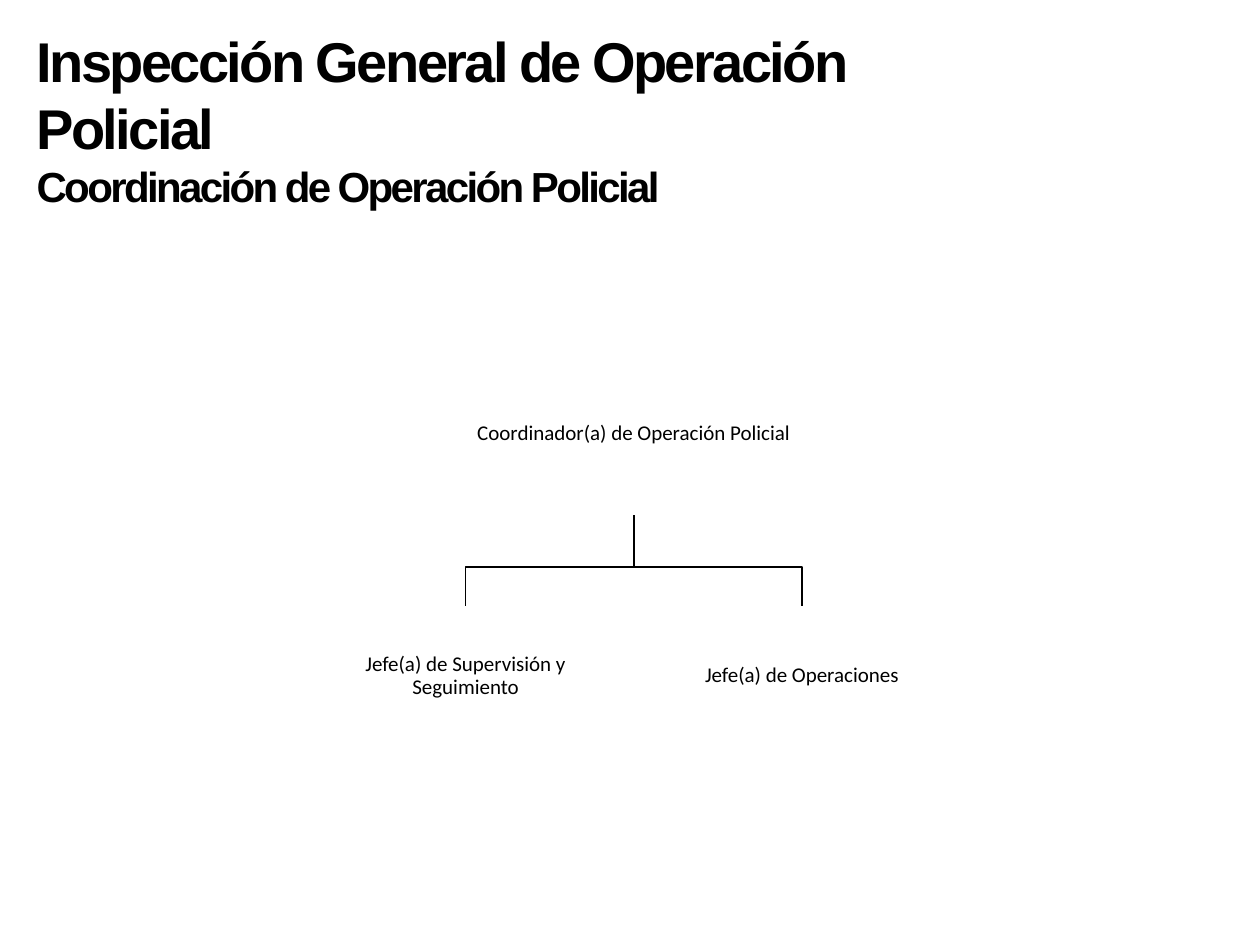
import pptx
import pptx.util
import pptx.dml.color
import pptx.enum.shapes
import pptx.enum.text

Pt = pptx.util.Pt
PP_ALIGN = pptx.enum.text.PP_ALIGN
MSO_ANCHOR = pptx.enum.text.MSO_ANCHOR


def rgb(value):
    return pptx.dml.color.RGBColor.from_string(value)


def add_run(p, text, font, size, bold=False):
    r = p.add_run()
    r.text = text
    r.font.name = font
    r.font.size = Pt(size)
    r.font.bold = bold
    r.font.color.rgb = rgb("000000")
    return r


prs = pptx.Presentation()
prs.slide_width, prs.slide_height = Pt(720), Pt(540)
s = prs.slides.add_slide(prs.slide_layouts[5])

title = s.shapes.title
title.left, title.top, title.width, title.height = Pt(13.7), Pt(11.5), Pt(537), Pt(113.8)
tf = title.text_frame
tf.word_wrap = True
tf.auto_size = pptx.enum.text.MSO_AUTO_SIZE.SHAPE_TO_FIT_TEXT
tf.vertical_anchor = MSO_ANCHOR.TOP
lines = [("Inspección General de Operación Policial", 32),
         ("Coordinación de Operación Policial", 24)]
for i, (text, size) in enumerate(lines):
    p = tf.paragraphs[0] if i == 0 else tf.add_paragraph()
    p.alignment = PP_ALIGN.LEFT
    p.space_before = Pt(0)
    r = add_run(p, text, "Arial", size, True)
    r.font._element.set("spc", "-150")

center, gap = 362.2, 96.1
parent_bottom, bar_y, child_top = 294.5, 324, 346.3
child_w, child_h = 146.9, 79.9

for x in (center + gap, center - gap):
    fb = s.shapes.build_freeform(Pt(center), Pt(parent_bottom))
    fb.add_line_segments([(Pt(center), Pt(bar_y)), (Pt(x), Pt(bar_y)),
                          (Pt(x), Pt(child_top))], close=False)
    sp = fb.convert_to_shape()
    sp.shadow.inherit = False
    sp.fill.background()
    sp.line.color.rgb = rgb("000000")
    sp.line.width = Pt(1)

posts = [("Coordinador(a) de Operación Policial", center, 200.9, 192.2, 93.6),
         ("Jefe(a) de Supervisión y Seguimiento", center - gap, child_top, child_w, child_h),
         ("Jefe(a) de Operaciones", center + gap, child_top, child_w, child_h)]
for text, x, top, w, h in posts:
    sp = s.shapes.add_shape(pptx.enum.shapes.MSO_SHAPE.RECTANGLE,
                            Pt(x - w / 2), Pt(top), Pt(w), Pt(h))
    sp.shadow.inherit = False
    sp.line.fill.background()
    if top == child_top:
        sp.fill.solid()
        sp.fill.fore_color.rgb = rgb("FFFFFF")
    else:
        sp.fill.background()
    tf = sp.text_frame
    tf.word_wrap = True
    tf.vertical_anchor = MSO_ANCHOR.MIDDLE
    tf.margin_left = tf.margin_right = tf.margin_top = tf.margin_bottom = Pt(0.6)
    p = tf.paragraphs[0]
    p.alignment = PP_ALIGN.CENTER
    p.line_spacing = 0.9
    add_run(p, text, "Calibri", 12)

prs.save("out.pptx")
